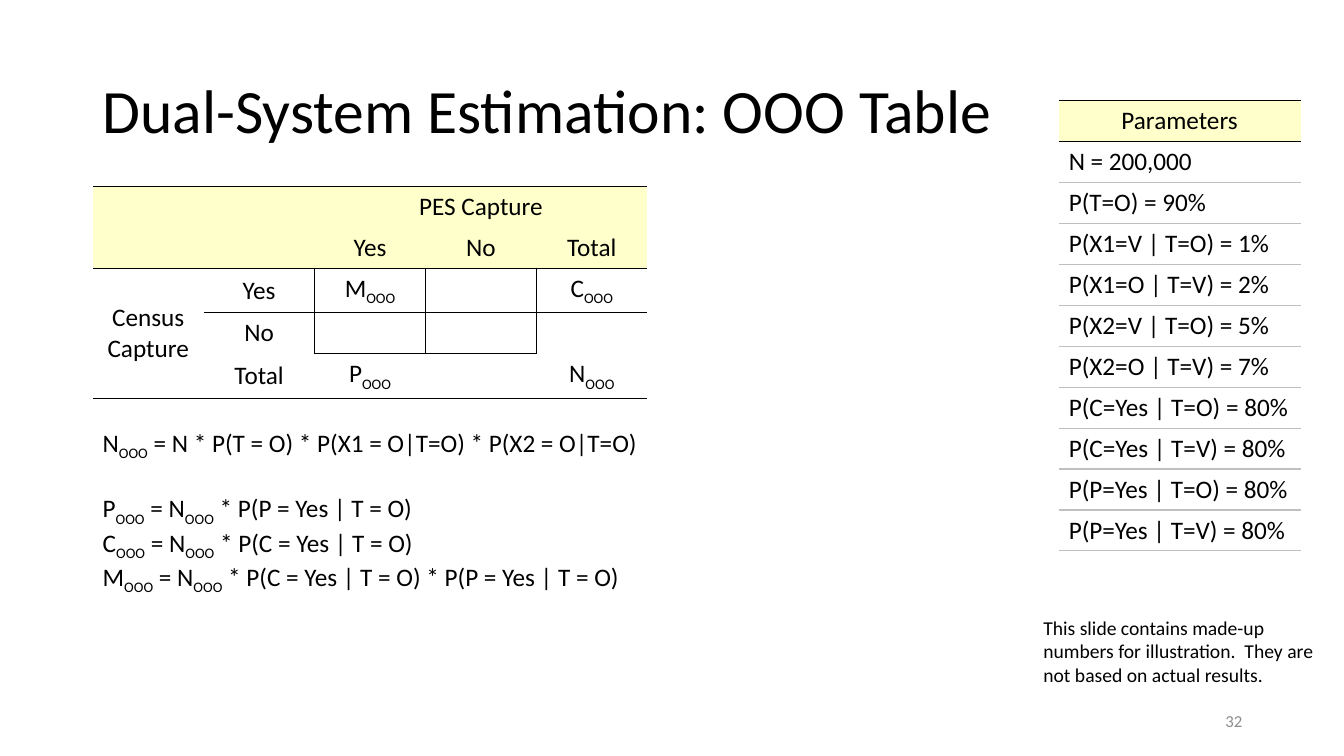
from lxml import etree
from pptx import Presentation
from pptx.dml.color import RGBColor
from pptx.enum.text import MSO_ANCHOR, PP_ALIGN
from pptx.oxml.ns import qn
from pptx.util import Inches, Pt

LEFT, CENTER, RIGHT = PP_ALIGN.LEFT, PP_ALIGN.CENTER, PP_ALIGN.RIGHT
TOP, MIDDLE = MSO_ANCHOR.TOP, MSO_ANCHOR.MIDDLE
FONT = "Calibri"
BLACK, GRAY, RULE, HEADER = "000000", "8C8C8C", "BFBFBF", "FFFFCC"
BLANK_LAYOUT = 6
ROW_HEIGHT = 0.406

CAPTURE_ROWS = [
    ["", "", "PES Capture", "", ""],
    ["", "", "Yes", "No", "Total"],
    ["Census Capture", "Yes", "M_OOO", "", "C_OOO"],
    ["", "No", "", "", ""],
    ["", "Total", "P_OOO", "", "N_OOO"],
]
CAPTURE_RULES = {0: range(5), 2: range(5), 3: range(5), 4: (2, 3), 5: range(5)}
CAPTURE_DIVIDERS = {2: (2, 3), 3: (2, 3), 4: (2, 3)}

PARAMETERS = [
    "Parameters",
    "N = 200,000",
    "P(T=O) = 90%",
    "P(X1=V | T=O) = 1%",
    "P(X1=O | T=V) = 2%",
    "P(X2=V | T=O) = 5%",
    "P(X2=O | T=V) = 7%",
    "P(C=Yes | T=O) = 80%",
    "P(C=Yes | T=V) = 80%",
    "P(P=Yes | T=O) = 80%",
    "P(P=Yes | T=V) = 80%",
]

FORMULAS = [
    "N_OOO_ = N * P(T = O) * P(X1 = O|T=O) * P(X2 = O|T=O)",
    "P_OOO_ = N_OOO_ * P(P = Yes | T = O)",
    "C_OOO_ = N_OOO_ * P(C = Yes | T = O)",
    "M_OOO_ = N_OOO_ * P(C = Yes | T = O) * P(P = Yes | T = O)",
]


def rgb(value):
    """Turn a hex string into a colour."""
    return RGBColor.from_string(value)


def write(paragraph, text, size=18, color=BLACK, align=LEFT):
    """Add runs to a paragraph; text between underscores is subscript."""
    paragraph.alignment = align
    for index, part in enumerate(text.split("_")):
        if not part:
            continue
        run = paragraph.add_run()
        run.text = part
        run.font.name = FONT
        run.font.size = Pt(size)
        run.font.color.rgb = rgb(color)
        if index % 2:
            run.font._element.set("baseline", "-25000")


def add_text(slide, box, lines, size=18, color=BLACK, align=LEFT, anchor=TOP):
    """Place a wrapped text box and return its paragraphs."""
    frame = slide.shapes.add_textbox(*map(Inches, box)).text_frame
    frame.word_wrap = True
    frame.vertical_anchor = anchor
    for index, line in enumerate(lines):
        paragraph = frame.add_paragraph() if index else frame.paragraphs[0]
        write(paragraph, line, size, color, align)
    return frame.paragraphs


def set_borders(cell, borders):
    """Draw the left, right, top and bottom borders, None meaning no line."""
    properties = cell._tc.get_or_add_tcPr()
    for side, color in zip("LRTB", borders):
        line = etree.SubElement(properties, qn(f"a:ln{side}"), w=str(Pt(1)))
        if color is None:
            etree.SubElement(line, qn("a:noFill"))
        else:
            fill = etree.SubElement(line, qn("a:solidFill"))
            etree.SubElement(fill, qn("a:srgbClr"), val=color)


def fill_cell(cell, text, borders, fill=None, align=CENTER, anchor=MIDDLE):
    """Set the borders, fill and text of one table cell."""
    set_borders(cell, borders)
    if fill:
        cell.fill.solid()
        cell.fill.fore_color.rgb = rgb(fill)
    else:
        cell.fill.background()
    cell.vertical_anchor = anchor
    write(cell.text_frame.paragraphs[0], text, align=align)


def add_grid(slide, left, top, width, rows, columns):
    """Add a plain table with even rows and columns."""
    box = map(Inches, (left, top, width, ROW_HEIGHT * rows))
    table = slide.shapes.add_table(rows, columns, *box).table
    table.first_row = False
    table.horz_banding = False
    return table


def add_capture_table(slide, left, top, width):
    """Build the census by PES capture table."""
    table = add_grid(slide, left, top, width, len(CAPTURE_ROWS), len(CAPTURE_ROWS[0]))
    table.cell(0, 2).merge(table.cell(0, 4))
    table.cell(2, 0).merge(table.cell(4, 0))
    for row, texts in enumerate(CAPTURE_ROWS):
        for column, text in enumerate(texts):
            dividers = [row in CAPTURE_DIVIDERS.get(edge, ()) for edge in (column, column + 1)]
            rules = [column in CAPTURE_RULES.get(edge, ()) for edge in (row, row + 1)]
            borders = [BLACK if drawn else None for drawn in dividers + rules]
            fill_cell(table.cell(row, column), text, borders, HEADER if row < 2 else None)


def add_parameter_table(slide, left, top, width):
    """Build the one-column list of parameters under its header."""
    table = add_grid(slide, left, top, width, len(PARAMETERS), 1)
    for row, text in enumerate(PARAMETERS):
        above = BLACK if row < 2 else RULE
        below = BLACK if row == 0 else RULE
        style = (HEADER, CENTER, MIDDLE) if row == 0 else (None, LEFT, TOP)
        fill_cell(table.cell(row, 0), text, (None, None, above, below), *style)


def add_formulas(slide, box):
    """Write the formulas, with a gap after the first."""
    paragraphs = add_text(slide, box, FORMULAS)
    paragraphs[1].space_before = Pt(22)


def main():
    """Build and save the slide."""
    deck = Presentation()
    deck.slide_width, deck.slide_height = Inches(13.33), Inches(7.5)
    slide = deck.slides.add_slide(deck.slide_layouts[BLANK_LAYOUT])
    title = add_text(slide, (0.92, 0.4, 11.5, 1.45),
                     ["Dual-System Estimation: OOO Table"], 44, anchor=MIDDLE)
    title[0].line_spacing = 0.9
    add_capture_table(slide, 0.92, 1.85, 5.5)
    add_text(slide, (9.42, 6.95, 3, 0.4), ["32"], 12, GRAY, RIGHT, MIDDLE)
    add_formulas(slide, (0.92, 4.19, 11.5, 1.62))
    add_parameter_table(slide, 10.5, 1, 2.4)
    add_text(slide, (10.25, 6.06, 2.93, 0.81),
             ["This slide contains made-up numbers for illustration.  "
              "They are not based on actual results."], 14)
    deck.save("out.pptx")


if __name__ == "__main__":
    main()
